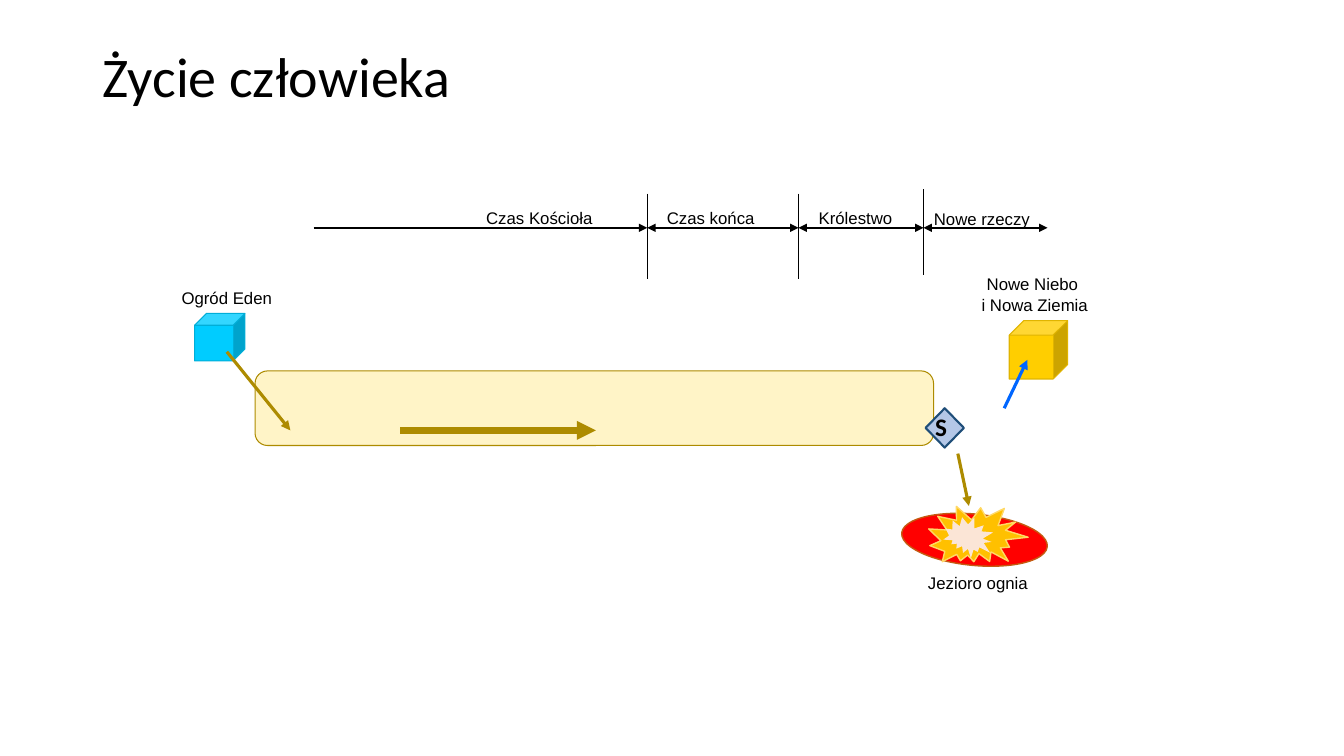
from itertools import pairwise

from lxml.etree import SubElement
from pptx import Presentation
from pptx.dml.color import RGBColor
from pptx.enum.shapes import MSO_CONNECTOR, MSO_SHAPE
from pptx.enum.text import MSO_ANCHOR, PP_ALIGN
from pptx.oxml.ns import qn
from pptx.util import Inches, Pt

COLORS = {
    "black": "000000", "life": "FFF4C7", "olive": "AD8B00", "blue": "0066FF",
    "eden": "00CCFF", "eden_edge": "00AED8", "heaven": "FFCE00", "heaven_edge": "E0B400",
    "judgement": "B4C7E7", "judgement_edge": "1F4E79", "lake": "FF0000", "lake_edge": "C55A11",
    "flame": "FFC000", "flame_edge": "FFD966", "glow": "FBE5D6",
}

# Content: positions are left, top, width, height in inches
TITLE = ("Życie człowieka", (0.92, 0.4, 11.5, 0.78))
AXIS_Y = 2.26
ERA_EDGES = [3.11, 6.42, 7.92, 9.16, 10.39]
DIVIDERS = [(6.42, 1.92), (7.92, 1.92), (9.16, 1.88)]
DIVIDER_HEIGHT = 0.85
LABELS = [
    ("Czas Kościoła", (4.63, 2.03, 1.44, 0.26)),
    ("Czas końca", (6.48, 2.03, 1.14, 0.26)),
    ("Królestwo", (8.02, 2.03, 0.93, 0.26)),
    ("Nowe rzeczy", (9.16, 2.04, 1.16, 0.26)),
    ("Ogród Eden", (1.53, 2.82, 1.44, 0.26)),
    ("Nowe Niebo\v i Nowa Ziemia", (9.52, 2.69, 1.44, 0.46)),
    ("Jezioro ognia", (8.98, 5.65, 1.44, 0.26)),
]
LIFE_BAR = (MSO_SHAPE.ROUNDED_RECTANGLE, (2.53, 3.68, 6.73, 0.74), "life", "olive", 0.75)
JUDGEMENT = (MSO_SHAPE.DIAMOND, (9.18, 4.05, 0.38, 0.39), "judgement", "judgement_edge", 1.5)
PLACES = [
    (MSO_SHAPE.CUBE, (1.93, 3.11, 0.5, 0.47), "eden", "eden_edge", 0.75),
    (MSO_SHAPE.CUBE, (10.01, 3.18, 0.58, 0.58), "heaven", "heaven_edge", 0.75),
]
LAKE_OF_FIRE = [
    (MSO_SHAPE.FLOWCHART_CONNECTOR, (8.94, 5.1, 1.45, 0.51), "lake", "lake_edge", 1, 5.4),
    (MSO_SHAPE.EXPLOSION2, (9.21, 4.98, 0.97, 0.68), "flame", "flame_edge", 1, 16.2),
    (MSO_SHAPE.EXPLOSION2, (9.38, 5.11, 0.47, 0.45), "glow", None, 0, 56.2),
]
PATH_ARROWS = [
    ((2.25, 3.49), (2.88, 4.27), "olive", 2.25),
    ((3.97, 4.27), (5.91, 4.27), "olive", 4.5),
    ((9.96, 4.05), (10.19, 3.57), "blue", 2.25),
    ((9.5, 4.5), (9.61, 5.02), "olive", 2.25),
]

presentation = Presentation()
presentation.slide_width, presentation.slide_height = Inches(13.33), Inches(7.5)
slide = presentation.slides.add_slide(presentation.slide_layouts[6])


def color(name):
    return RGBColor.from_string(COLORS[name])


def add_shape(shapes, kind, box, fill, edge, weight, rotation=0):
    shape = shapes.add_shape(kind, *map(Inches, box))
    shape.shadow.inherit = False
    shape.rotation = rotation
    shape.fill.solid()
    shape.fill.fore_color.rgb = color(fill)
    if edge:
        shape.line.color.rgb = color(edge)
        shape.line.width = Pt(weight)
    else:
        shape.line.fill.background()
    return shape


def add_line(start, end, line_color, weight, ends=()):
    """Draw a line; ends lists headEnd and/or tailEnd for arrowheads."""
    line = slide.shapes.add_connector(MSO_CONNECTOR.STRAIGHT, *map(Inches, start + end))
    line.line.color.rgb = color(line_color)
    line.line.width = Pt(weight)
    for end_name in ends:
        SubElement(line.line._get_or_add_ln(), qn(f"a:{end_name}"), type="triangle")
    SubElement(line._element.spPr, qn("a:effectLst"))


def set_text(shape, text, font, size, margins, align=PP_ALIGN.LEFT, bold=False):
    frame = shape.text_frame
    frame.word_wrap = True
    frame.vertical_anchor = MSO_ANCHOR.MIDDLE
    frame.margin_left = frame.margin_right = Inches(margins[0])
    frame.margin_top = frame.margin_bottom = Inches(margins[1])
    frame.text = text
    paragraph = frame.paragraphs[0]
    paragraph.alignment = align
    paragraph.font.name, paragraph.font.size = font, Pt(size)
    paragraph.font.bold = bold
    paragraph.font.color.rgb = color("black")
    return paragraph


# Life bar and places
add_shape(slide.shapes, *LIFE_BAR)
for place in PLACES:
    add_shape(slide.shapes, *place)

# Judgement diamond
judgement = add_shape(slide.shapes, *JUDGEMENT)
letter = set_text(judgement, "S", "Calibri", 18, (0, 0.04), bold=True)
letter.line_spacing = 0.9

# Lake of fire
lake = slide.shapes.add_group_shape()
for part in LAKE_OF_FIRE:
    add_shape(lake.shapes, *part)

# Timeline: the first era has no arrowhead at its start
for index, (left, right) in enumerate(pairwise(ERA_EDGES)):
    ends = ("headEnd", "tailEnd") if index else ("tailEnd",)
    add_line((left, AXIS_Y), (right, AXIS_Y), "black", 1.5, ends)
for x, top in DIVIDERS:
    add_line((x, top), (x, top + DIVIDER_HEIGHT), "black", 0.5)

# Path arrows
for arrow in PATH_ARROWS:
    add_line(*arrow, ends=("tailEnd",))

# Labels and title
for text, box in LABELS:
    label = slide.shapes.add_textbox(*map(Inches, box))
    set_text(label, text, "Arial", 12, (0.03, 0.03), PP_ALIGN.CENTER)
title_text, title_box = TITLE
title = slide.shapes.add_textbox(*map(Inches, title_box))
set_text(title, title_text, "Calibri", 40, (0.1, 0.05)).line_spacing = 0.9

presentation.save("out.pptx")
